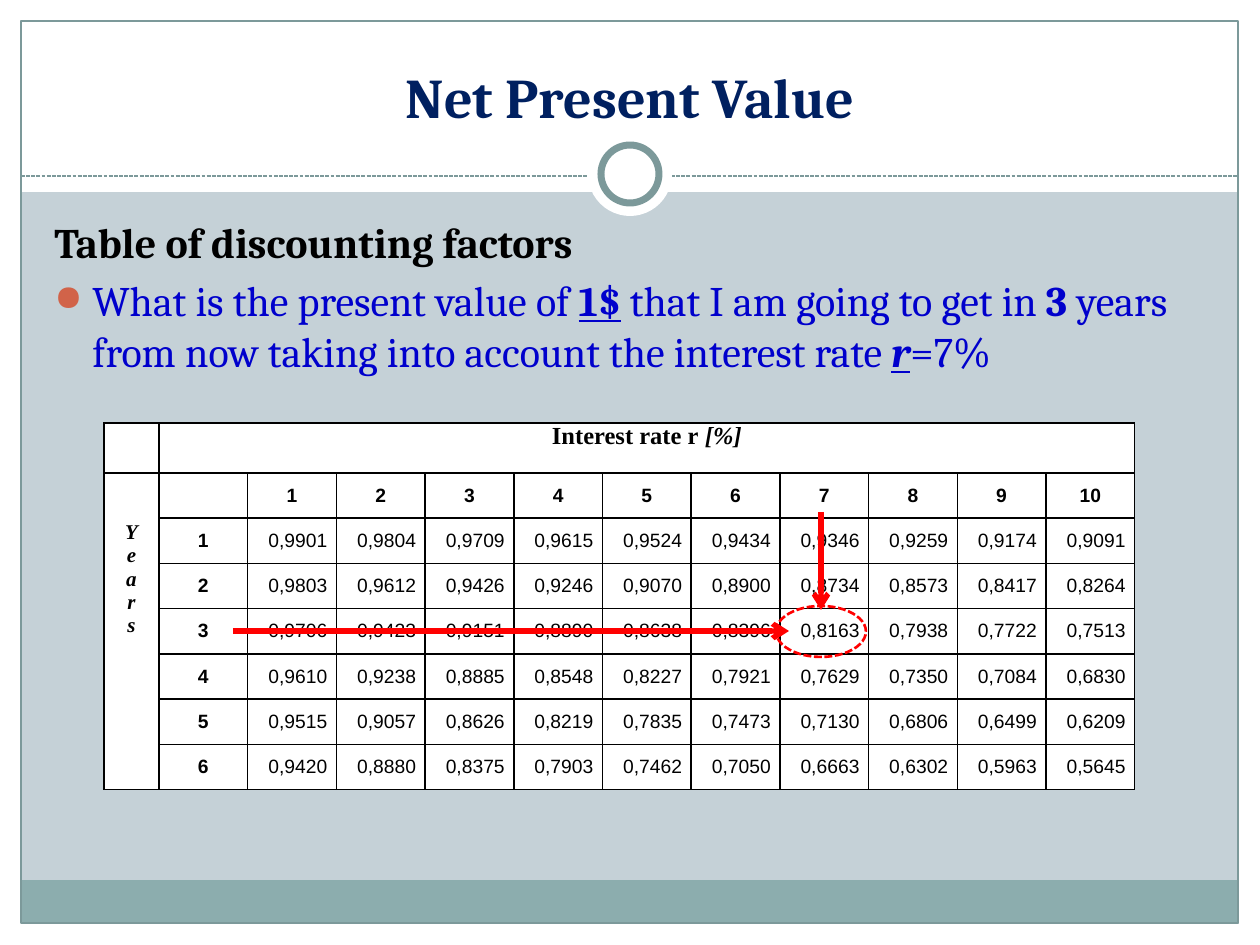
import pptx
import pptx.util
import pptx.dml.color
import pptx.enum.dml
import pptx.enum.shapes
import pptx.enum.text
import pptx.oxml
import pptx.oxml.ns
import lxml.etree

EMU_PER_PX = 914400 / 126
SHAPE = pptx.enum.shapes.MSO_SHAPE
ALIGN = pptx.enum.text.PP_ALIGN
ANCHOR = pptx.enum.text.MSO_ANCHOR
DASH = pptx.enum.dml.MSO_LINE.SQUARE_DOT
WHITE, BLACK, RED, SAGE, BLUE = "FFFFFF", "000000", "FF0000", "7C999A", "0000CC"


def px(n):
    return pptx.util.Emu(round(n * EMU_PER_PX))


def color(hex_code):
    return pptx.dml.color.RGBColor.from_string(hex_code)


def sub(parent, tag, **attrs):
    return lxml.etree.SubElement(parent, pptx.oxml.ns.qn(tag), attrs)


class SlideBuilder:
    heading_font = "Cambria"
    table_font = "Times New Roman"
    number_font = "Arial"

    def __init__(self, prs, background):
        self.s = prs.slides.add_slide(prs.slide_layouts[6])
        self.s.background.fill.solid()
        self.s.background.fill.fore_color.rgb = color(background)

    def outline(self, line, hex_code, width, dashed):
        line.color.rgb = color(hex_code)
        line.width = pptx.util.Pt(width)
        if dashed:
            line.dash_style = DASH

    def shape(self, kind, x, y, w, h, fill=None, line=None, width=0.75, dashed=False):
        sp = self.s.shapes.add_shape(kind, px(x), px(y), px(w), px(h))
        sp.shadow.inherit = False
        if fill:
            sp.fill.solid()
            sp.fill.fore_color.rgb = color(fill)
        else:
            sp.fill.background()
        if line:
            self.outline(sp.line, line, width, dashed)
        else:
            sp.line.fill.background()

    def connector(self, x1, y1, x2, y2, hex_code, width, dashed=False, arrow=False):
        straight = pptx.enum.shapes.MSO_CONNECTOR.STRAIGHT
        cxn = self.s.shapes.add_connector(straight, px(x1), px(y1), px(x2), px(y2))
        self.outline(cxn.line, hex_code, width, dashed)
        if arrow:
            sub(cxn.line._get_or_add_ln(), "a:tailEnd", type="arrow")
        sub(cxn._element.spPr, "a:effectLst")

    def textbox(self, x, y, w, h, anchor=ANCHOR.TOP):
        tf = self.s.shapes.add_textbox(px(x), px(y), px(w), px(h)).text_frame
        tf.word_wrap = True
        tf.vertical_anchor = anchor
        return tf

    def paragraph(self, p, runs, font, size, hex_code=BLACK, align=ALIGN.LEFT, bold=None):
        p.alignment = align
        p.font.name = font
        p.font.size = pptx.util.Pt(size)
        p.font.bold = bold
        p.font.color.rgb = color(hex_code)
        for text, marks in runs:
            r = p.add_run()
            r.text = text
            if marks:
                r.font.bold = "b" in marks
                r.font.italic = "i" in marks
                r.font.underline = "u" in marks

    def bullet(self, p, char, hex_code, percent, indent):
        pPr = p._p.get_or_add_pPr()
        pPr.set("marL", str(px(indent)))
        pPr.set("indent", str(-px(indent)))
        sub(sub(pPr, "a:buClr"), "a:srgbClr", val=hex_code)
        sub(pPr, "a:buSzPct", val=str(percent * 1000))
        sub(pPr, "a:buChar", char=char)

    def table(self, x, y, widths, heights):
        frame = self.s.shapes.add_table(len(heights), len(widths), px(x), px(y),
                                        px(sum(widths)), px(sum(heights)))
        table = frame.table
        table.first_row = table.horz_banding = False
        for column, width in zip(table.columns, widths):
            column.width = px(width)
        for row, height in zip(table.rows, heights):
            row.height = px(height)
        for cell in table.iter_cells():
            cell.margin_left = cell.margin_right = px(9)
            cell.margin_top = cell.margin_bottom = 0
            tcPr = cell._tc.get_or_add_tcPr()
            for side in ("a:lnL", "a:lnR", "a:lnT", "a:lnB"):
                ln = sub(tcPr, side, w=str(pptx.util.Pt(1)))
                sub(sub(ln, "a:solidFill"), "a:srgbClr", val=BLACK)
            cell.fill.solid()
            cell.fill.fore_color.rgb = color(WHITE)
        return table

    def number(self, cell, text, align=ALIGN.CENTER, bold=True):
        cell.vertical_anchor = ANCHOR.MIDDLE
        self.paragraph(cell.text_frame.paragraphs[0], [(text, "")],
                       self.number_font, 11, align=align, bold=bold)


def draw_frame(b):
    for box in ((0, 924, 1260, 21), (0, 0, 1260, 192), (0, 0, 21, 945), (1239, 0, 21, 945)):
        b.shape(SHAPE.RECTANGLE, *box, fill=WHITE)
    b.shape(SHAPE.RECTANGLE, 21, 880, 1217, 43, fill="8CADAE")
    b.shape(SHAPE.RECTANGLE, 21, 21, 1217, 902, line=SAGE)
    b.connector(21, 176, 1238, 176, SAGE, 0.75, dashed=True)
    b.shape(SHAPE.OVAL, 588, 132, 84, 84, fill=WHITE)
    b.shape(SHAPE.OVAL, 601, 145, 58, 58, fill=WHITE, line=SAGE, width=4)


def draw_text(b):
    title = b.textbox(42, 32, 1176, 104, ANCHOR.BOTTOM)
    b.paragraph(title.paragraphs[0], [("Net Present Value", "")],
                b.heading_font, 32, "002060", ALIGN.CENTER, True)

    body = b.textbox(42, 210, 1154, 630)
    heading, question = body.paragraphs[0], body.add_paragraph()
    heading.space_before = question.space_before = pptx.util.Pt(4.8)
    b.paragraph(heading, [("Table of discounting factors", "")], b.heading_font, 24, bold=True)
    b.bullet(question, "●", "D16349", 85, 38)
    b.paragraph(question, [
        ("What is the present value of ", ""), ("1$", "bu"),
        (" that I am going to get in ", ""), ("3", "b"),
        (" years from now taking into account the interest rate ", ""),
        ("r", "biu"), ("=7%", ""),
    ], b.heading_font, 24, BLUE)


def draw_factors(b):
    rates, years = range(1, 11), range(1, 7)
    table = b.table(104, 423, [55] + [976 / 11] * 11, [50] + [317 / 7] * 7)
    table.cell(0, 1).merge(table.cell(0, 11))
    table.cell(1, 0).merge(table.cell(7, 0))
    b.paragraph(table.cell(0, 1).text_frame.paragraphs[0],
                [("Interest rate r", "b"), (" [%]", "bi")],
                b.table_font, 14, align=ALIGN.CENTER)

    side = table.cell(1, 0)
    side.margin_top = px(48)
    tf = side.text_frame
    for i, letter in enumerate("Years"):
        p = tf.add_paragraph() if i else tf.paragraphs[0]
        b.paragraph(p, [(letter, "bi")], b.table_font, 12, align=ALIGN.CENTER)

    for rate in rates:
        b.number(table.cell(1, rate + 1), str(rate))
    for year in years:
        b.number(table.cell(year + 1, 1), str(year))
        for rate in rates:
            factor = (1 + rate / 100) ** -year
            b.number(table.cell(year + 1, rate + 1), f"{factor:.4f}".replace(".", ","),
                     ALIGN.RIGHT, False)


def draw_lookup(b):
    b.connector(233, 631, 789, 631, RED, 3, arrow=True)
    b.connector(821, 512, 821, 610, RED, 3, arrow=True)
    b.shape(SHAPE.OVAL, 776, 606, 90, 51, line=RED, width=1.5, dashed=True)


def main():
    prs = pptx.Presentation()
    prs.slide_width, prs.slide_height = px(1260), px(945)
    b = SlideBuilder(prs, "C5D1D7")
    draw_frame(b)
    draw_text(b)
    draw_factors(b)
    draw_lookup(b)
    prs.save("out.pptx")


if __name__ == "__main__":
    main()
